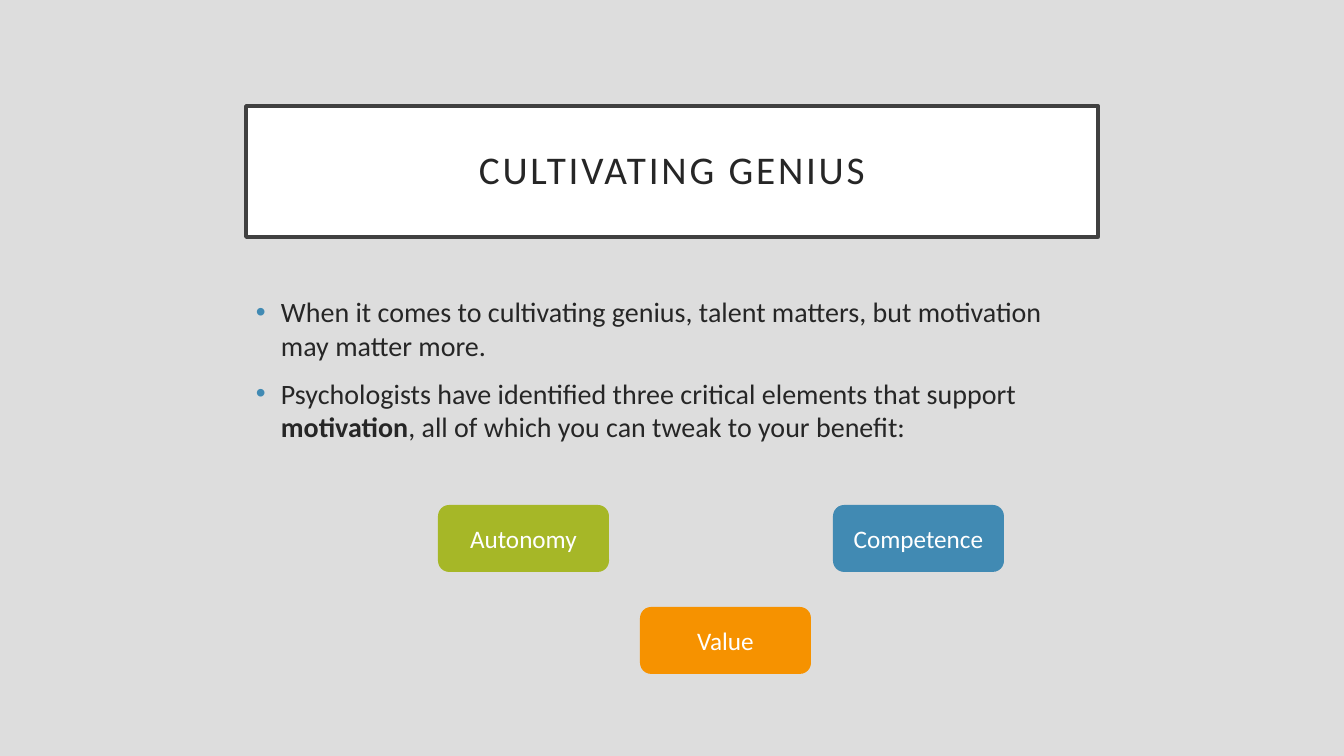
from lxml import etree
from pptx import Presentation
from pptx.dml.color import RGBColor
from pptx.enum.shapes import MSO_SHAPE
from pptx.enum.text import MSO_ANCHOR, PP_ALIGN
from pptx.oxml.ns import qn
from pptx.util import Emu, Pt

SLIDE_WIDTH, SLIDE_HEIGHT = 1344, 756
EMU_PER_PX = 12192000 / SLIDE_WIDTH
TITLE_ONLY = 5

FONT = "Calibri"
BACKDROP, INK, BORDER, WHITE = "DDDDDD", "262626", "404040", "FFFFFF"
GREEN, ORANGE, BLUE = "A6B727", "F69200", "418AB3"

COLUMN_LEFT, COLUMN_WIDTH = 246, 852
ELEMENT_WIDTH, ELEMENT_HEIGHT = 171, 67
UPPER_ROW, LOWER_ROW = 505, 607

# Each point is a list of (text, bold) runs.
POINTS = [
    [("When it comes to cultivating genius, talent matters, "
      "but motivation may matter more.", False)],
    [("Psychologists have identified three critical elements that support ", False),
     ("motivation", True),
     (", all of which you can tweak to your benefit:", False)],
]
ELEMENTS = [
    ("Autonomy", 438, UPPER_ROW, GREEN),
    ("Value", 640, LOWER_ROW, ORANGE),
    ("Competence", 833, UPPER_ROW, BLUE),
]


def px(length):
    return Emu(round(length * EMU_PER_PX))


def color(hex_code):
    return RGBColor.from_string(hex_code)


def paint(fill, hex_code):
    fill.solid()
    fill.fore_color.rgb = color(hex_code)


def set_all(target, values):
    for name, value in values.items():
        setattr(target, name, value)


def add_run(paragraph, text, size, hex_code, bold=False):
    run = paragraph.add_run()
    run.text = text
    set_all(run.font, {"name": FONT, "size": Pt(size), "bold": bold})
    run.font.color.rgb = color(hex_code)
    return run


def add_bullet(paragraph, indent, hex_code):
    properties = paragraph._p.get_or_add_pPr()
    properties.set("marL", str(px(indent)))
    properties.set("indent", str(-px(indent)))
    bullet_color = etree.SubElement(properties, qn("a:buClr"))
    etree.SubElement(bullet_color, qn("a:srgbClr"), val=hex_code)
    etree.SubElement(properties, qn("a:buFont"), typeface="Arial")
    etree.SubElement(properties, qn("a:buChar"), char="•")


def format_title(title, text):
    set_all(title, {"left": px(COLUMN_LEFT), "top": px(106),
                    "width": px(COLUMN_WIDTH), "height": px(131)})
    paint(title.fill, WHITE)
    paint(title.line.fill, BORDER)
    title.line.width = Pt(2.5)
    frame = title.text_frame
    set_all(frame, {"vertical_anchor": MSO_ANCHOR.MIDDLE, "word_wrap": True,
                    "margin_left": px(20), "margin_right": px(20),
                    "margin_top": px(20), "margin_bottom": px(20)})
    heading = frame.paragraphs[0]
    set_all(heading, {"alignment": PP_ALIGN.CENTER, "line_spacing": 0.9})
    run = add_run(heading, text, 28, INK)
    run.font._element.set("spc", "200")


def add_points(slide, points):
    box = slide.shapes.add_textbox(px(COLUMN_LEFT), px(290), px(COLUMN_WIDTH), px(342))
    frame = box.text_frame
    frame.word_wrap = True
    for index, runs in enumerate(points):
        point = frame.add_paragraph() if index else frame.paragraphs[0]
        point.space_before = Pt(10)
        add_bullet(point, 25, BLUE)
        for text, bold in runs:
            add_run(point, text, 20, INK, bold)


def add_element(slide, label, left, top, hex_code):
    """Add one rounded box naming an element of motivation."""
    element = slide.shapes.add_shape(MSO_SHAPE.ROUNDED_RECTANGLE, px(left), px(top),
                                     px(ELEMENT_WIDTH), px(ELEMENT_HEIGHT))
    element.shadow.inherit = False
    paint(element.fill, hex_code)
    element.line.fill.background()
    frame = element.text_frame
    set_all(frame, {"vertical_anchor": MSO_ANCHOR.MIDDLE, "word_wrap": True})
    frame.paragraphs[0].alignment = PP_ALIGN.CENTER
    add_run(frame.paragraphs[0], label, 18, WHITE)


def main():
    deck = Presentation()
    set_all(deck, {"slide_width": px(SLIDE_WIDTH), "slide_height": px(SLIDE_HEIGHT)})
    slide = deck.slides.add_slide(deck.slide_layouts[TITLE_ONLY])
    paint(slide.background.fill, BACKDROP)
    format_title(slide.shapes.title, "CULTIVATING GENIUS")
    add_points(slide, POINTS)
    for label, left, top, hex_code in ELEMENTS:
        add_element(slide, label, left, top, hex_code)
    deck.save("out.pptx")


if __name__ == "__main__":
    main()
